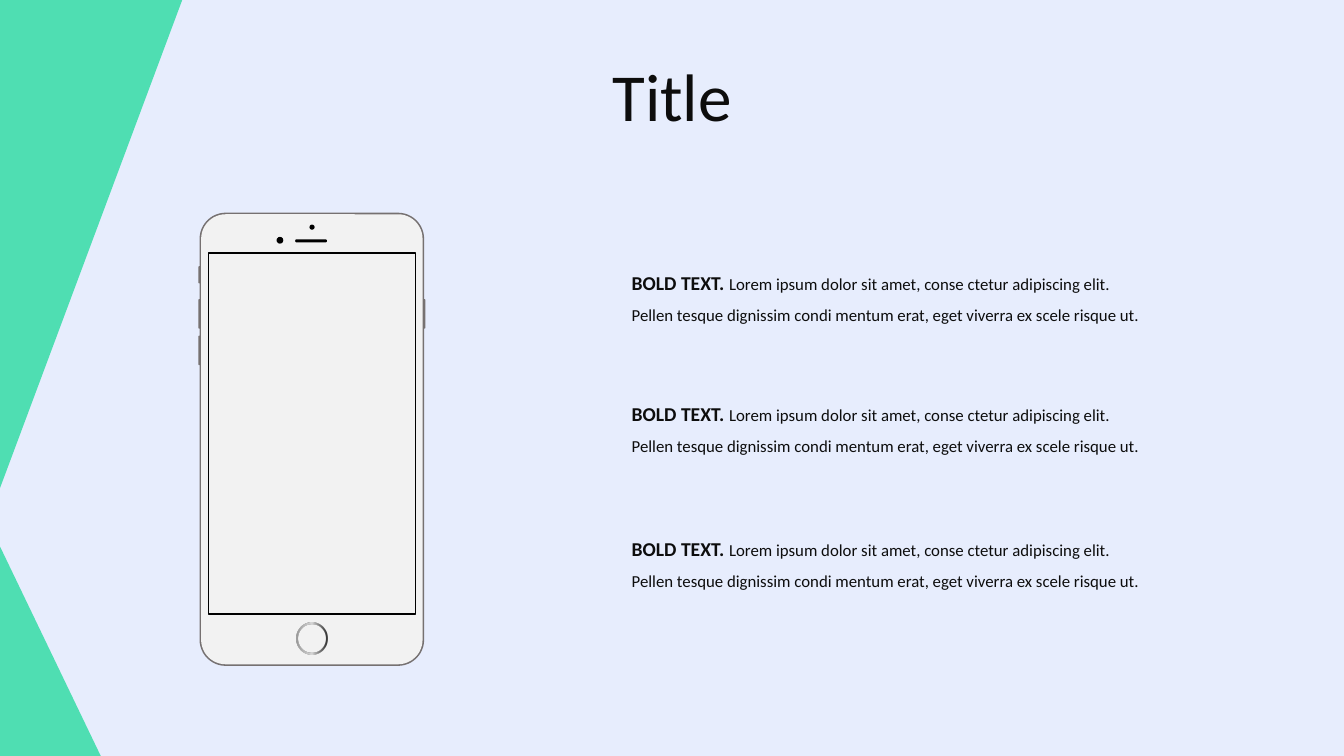
from lxml import etree
from pptx import Presentation
from pptx.dml.color import RGBColor
from pptx.enum import shapes, text
from pptx.oxml import ns
from pptx.util import Cm, Pt

TITLE = "Title"
LEAD = "BOLD TEXT. "
BODY = ("Lorem ipsum dolor sit amet, conse ctetur adipiscing elit. "
        "Pellen tesque dignissim condi mentum erat, eget viverra ex scele risque ut.")

THEME = {
    "font": "Calibri", "title": 48, "lead": 14, "body": 12,
    "back": "E7EDFD", "accent": "4FDEB2", "ink": "0D0D0D",
    "edge": "767171", "face": "F2F2F2", "black": "000000",
    "ring": [(0, "979797", 100), (50, "D7D7D7", 100), (100, "000000", 80)],
}

TITLE_BOX = (7.77, 1.24, 18.34, 2.31)
TEXT_LEFT, TEXT_WIDTH, TEXT_HEIGHT = 15.67, 13.67, 1.85
TEXT_TOPS = [6.4, 9.7, 13.11]

PHONE = (5.03, 5.36, 5.66, 11.42)
RADIUS, RIM = 0.66, 0.04
BUTTON_WIDTH, BUTTON_OUT = 0.1, 0.03
LEFT_BUTTONS = [(6.71, 0.43), (7.54, 0.74), (8.46, 0.74)]
RIGHT_BUTTONS = [(7.54, 0.74)]
LENS = (6.97, 5.97, 0.17, 0.17)
SENSOR = (7.8, 5.66, 0.13, 0.13)
SPEAKER = (7.44, 6.03, 0.8, 0.08)
HOME, RING_WIDTH = (7.47, 15.7, 0.79, 0.79), 0.05
SCREEN = (5.26, 6.38, 5.21, 9.09)

KIND = shapes.MSO_SHAPE


def rgb(name):
    return RGBColor.from_string(THEME[name])


def add_shape(parent, kind, box, color=None, adjust=None):
    sp = parent.add_shape(kind, *map(Cm, box))
    sp.shadow.inherit = False
    sp.line.fill.background()
    if color:
        sp.fill.solid()
        sp.fill.fore_color.rgb = rgb(color)
    else:
        sp.fill.background()
    if adjust is not None:
        sp.adjustments[0] = adjust
    return sp


def add_rounded(parent, box, color, radius):
    return add_shape(parent, KIND.ROUNDED_RECTANGLE, box, color, radius / min(box[2:]))


def add_text(s, box, runs, align, spacing):
    tb = s.shapes.add_textbox(*map(Cm, box))
    tf = tb.text_frame
    tf.word_wrap = True
    tf.auto_size = text.MSO_AUTO_SIZE.SHAPE_TO_FIT_TEXT
    p = tf.paragraphs[0]
    p.alignment = align
    p.line_spacing = spacing
    p.font.name = THEME["font"]
    p.font.color.rgb = rgb("ink")
    for words, size, bold in runs:
        r = p.add_run()
        r.text = words
        r.font.size = Pt(THEME[size])
        r.font.bold = bold


def fill_ring(sp):
    sp.fill.gradient()
    sp.fill.gradient_angle = 0
    stops = sp._element.spPr.find(".//" + ns.qn("a:gsLst"))
    for stop in list(stops):
        stops.remove(stop)
    for pos, color, opacity in THEME["ring"]:
        stop = etree.SubElement(stops, ns.qn("a:gs"), pos=str(pos * 1000))
        tint = etree.SubElement(stop, ns.qn("a:srgbClr"), val=color)
        if opacity < 100:
            etree.SubElement(tint, ns.qn("a:alpha"), val=str(opacity * 1000))


def add_corners(s):
    add_shape(s.shapes, KIND.RIGHT_TRIANGLE, (0, 13.77, 2.54, 5.28), "accent")
    width, height, top = 4.6, 12.32, -0.02
    box = ((width - height) / 2, top + (height - width) / 2, height, width)
    add_shape(s.shapes, KIND.RIGHT_TRIANGLE, box, "accent").rotation = 90


def add_phone(s):
    phone = s.shapes.add_group_shape().shapes
    x, y, w, h = PHONE
    sides = [(x - BUTTON_OUT, LEFT_BUTTONS),
             (x + w + BUTTON_OUT - BUTTON_WIDTH, RIGHT_BUTTONS)]
    for left, buttons in sides:
        for top, height in buttons:
            add_rounded(phone, (left, top, BUTTON_WIDTH, height), "edge", 0.02)
    add_rounded(phone, PHONE, "edge", RADIUS)
    face = (x + RIM, y + RIM, w - 2 * RIM, h - 2 * RIM)
    add_rounded(phone, face, "face", RADIUS - RIM)
    for dot in (LENS, SENSOR):
        add_shape(phone, KIND.OVAL, dot, "black")
    add_rounded(phone, SPEAKER, "black", SPEAKER[3] / 2)
    fill_ring(add_shape(phone, KIND.DONUT, HOME, adjust=RING_WIDTH / HOME[2]))
    screen = add_shape(s.shapes, KIND.RECTANGLE, SCREEN)
    screen.line.color.rgb = rgb("black")
    screen.line.width = Pt(1)


def main():
    prs = Presentation()
    prs.slide_width, prs.slide_height = Cm(33.87), Cm(19.05)
    s = prs.slides.add_slide(prs.slide_layouts[6])
    s.background.fill.solid()
    s.background.fill.fore_color.rgb = rgb("back")
    add_corners(s)
    add_phone(s)
    add_text(s, TITLE_BOX, [(TITLE, "title", False)], text.PP_ALIGN.CENTER, 1.0)
    for top in TEXT_TOPS:
        add_text(s, (TEXT_LEFT, top, TEXT_WIDTH, TEXT_HEIGHT),
                 [(LEAD, "lead", True), (BODY, "body", False)],
                 text.PP_ALIGN.LEFT, 1.5)
    prs.save("out.pptx")


if __name__ == "__main__":
    main()
